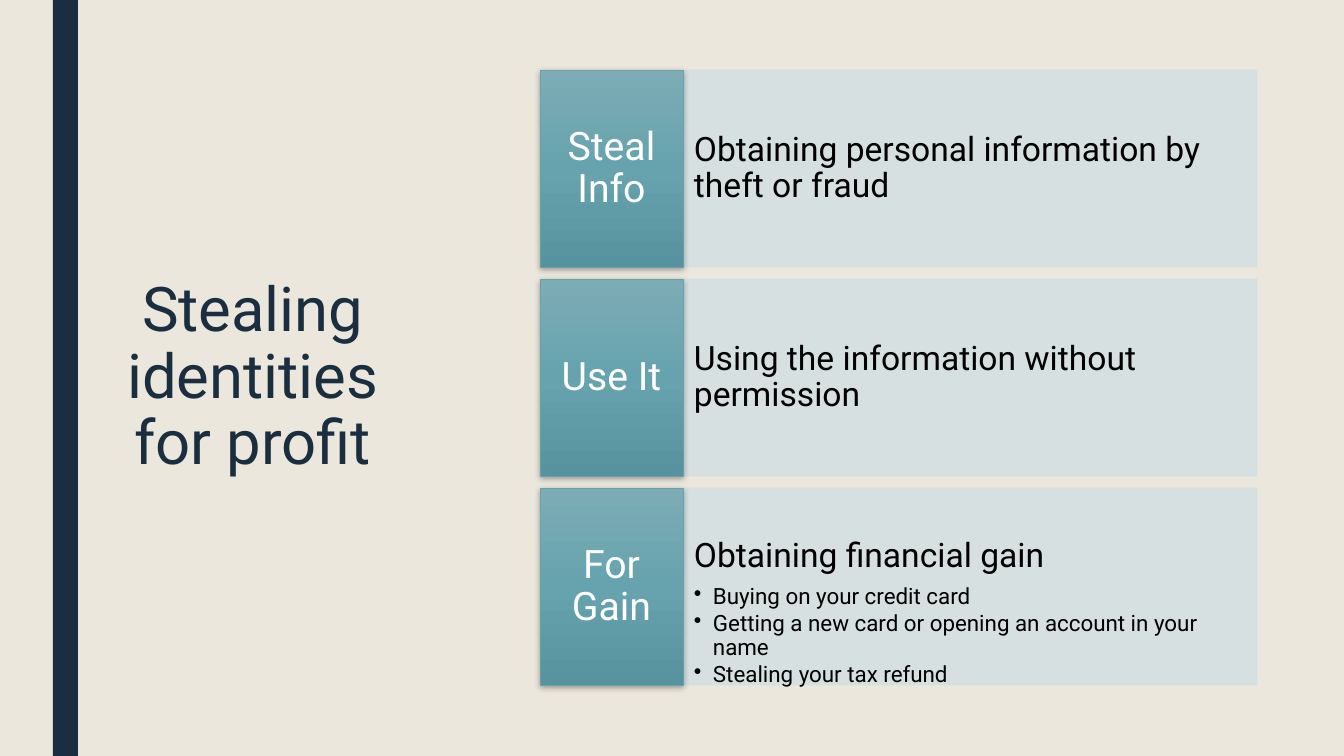
from lxml import etree
from pptx import Presentation
from pptx.dml.color import RGBColor
from pptx.enum import shapes, text
from pptx.oxml import ns
from pptx.util import Emu, Pt

TITLE = "Stealing identities for profit"
STEPS = [
    ("Steal Info", "Obtaining personal information by theft or fraud", []),
    ("Use It", "Using the information without permission", []),
    ("For Gain", "Obtaining financial gain", [
        "Buying on your credit card",
        "Getting a new card or opening an account in your name",
        "Stealing your tax refund",
    ]),
]
FONT = "Roboto"
CREAM, NAVY, PALE, EDGE = "EBE7DD", "1A2E40", "D4E0E2", "69A1AB"
BLACK, WHITE = "000000", "FFFFFF"
TEAL_STOPS = [(0, "7DACB5"), (50, "66A3AE"), (100, "57939E")]

# Layout in px
SLIDE_W, SLIDE_H = 1344, 756
BAR = (53, 0, 25, SLIDE_H)
TITLE_BOX = (71, 71, 364, 615)
ROWS_TOP, ROW_H, ROW_GAP = 70, 197, 12
LABEL_X, LABEL_W, DETAIL_W = 540, 143, 574


def px(n):
    return Emu(round(n * 914400 / 100.8))


def color(hex_string):
    return RGBColor.from_string(hex_string)


def sub(parent, tag, **attrs):
    return etree.SubElement(parent, ns.qn(tag), {k: str(v) for k, v in attrs.items()})


def add_rect(box, fill=None, line=None):
    rect = slide.shapes.add_shape(shapes.MSO_SHAPE.RECTANGLE, *map(px, box))
    rect.shadow.inherit = False
    if fill:
        rect.fill.solid()
        rect.fill.fore_color.rgb = color(fill)
    if line:
        rect.line.color.rgb = color(line)
        rect.line.width = Pt(0.5)
    else:
        rect.line.fill.background()
    return rect


def make_translucent(rect, percent):
    for rgb in rect._element.spPr.iter(ns.qn("a:srgbClr")):
        sub(rgb, "a:alpha", val=percent * 1000)


def shade_teal(rect):
    rect.fill.gradient()
    rect.fill.gradient_angle = 270
    stops = rect._element.spPr.find(".//" + ns.qn("a:gsLst"))
    stops.clear()
    for position, hex_string in TEAL_STOPS:
        stop = sub(stops, "a:gs", pos=position * 1000)
        sub(stop, "a:srgbClr", val=hex_string)


def drop_shadow(rect):
    effects = rect._element.spPr.find(ns.qn("a:effectLst"))
    shadow = sub(effects, "a:outerShdw", blurRad=Pt(4.5), dist=Pt(1.5),
                 dir=5400000, rotWithShape=0)
    sub(sub(shadow, "a:srgbClr", val=BLACK), "a:alpha", val=35000)


def set_frame(shape, side, end, anchor=text.MSO_ANCHOR.MIDDLE):
    frame = shape.text_frame
    frame.word_wrap = True
    frame.vertical_anchor = anchor
    frame.margin_left = frame.margin_right = px(side)
    frame.margin_top = frame.margin_bottom = px(end)
    return frame


def write(paragraph, words, size, hex_string, align=text.PP_ALIGN.LEFT, after=0):
    paragraph.alignment = align
    paragraph.line_spacing = 0.9
    paragraph.space_after = Pt(after)
    run = paragraph.add_run()
    run.text = words
    run.font.name = FONT
    run.font.size = Pt(size)
    run.font.color.rgb = color(hex_string)


def add_bullet(paragraph):
    props = paragraph._p.get_or_add_pPr()
    props.set("marL", str(px(19)))
    props.set("indent", str(-px(19)))
    sub(props, "a:buChar", char="•")


prs = Presentation()
prs.slide_width, prs.slide_height = px(SLIDE_W), px(SLIDE_H)
slide = prs.slides.add_slide(prs.slide_layouts[6])
slide.background.fill.solid()
slide.background.fill.fore_color.rgb = color(CREAM)

# Side bar and title
add_rect(BAR, NAVY)
title = slide.shapes.add_textbox(*map(px, TITLE_BOX))
write(set_frame(title, 20, 5).paragraphs[0], TITLE, 44, NAVY, text.PP_ALIGN.CENTER)

# One row per step: detail panel, then label
for i, (label_words, heading, points) in enumerate(STEPS):
    top = ROWS_TOP + i * (ROW_H + ROW_GAP)

    detail = add_rect((LABEL_X + LABEL_W, top, DETAIL_W, ROW_H), PALE, PALE)
    make_translucent(detail, 90)
    anchor = text.MSO_ANCHOR.TOP if points else text.MSO_ANCHOR.MIDDLE
    frame = set_frame(detail, 11, 50, anchor)
    write(frame.paragraphs[0], heading, 24, BLACK, after=8 if points else 0)
    for point in points:
        paragraph = frame.add_paragraph()
        write(paragraph, point, 16, BLACK, after=2)
        add_bullet(paragraph)

    label = add_rect((LABEL_X, top, LABEL_W, ROW_H), line=EDGE)
    shade_teal(label)
    drop_shadow(label)
    write(set_frame(label, 8, 19).paragraphs[0], label_words, 28, WHITE,
          text.PP_ALIGN.CENTER)

prs.save("out.pptx")
